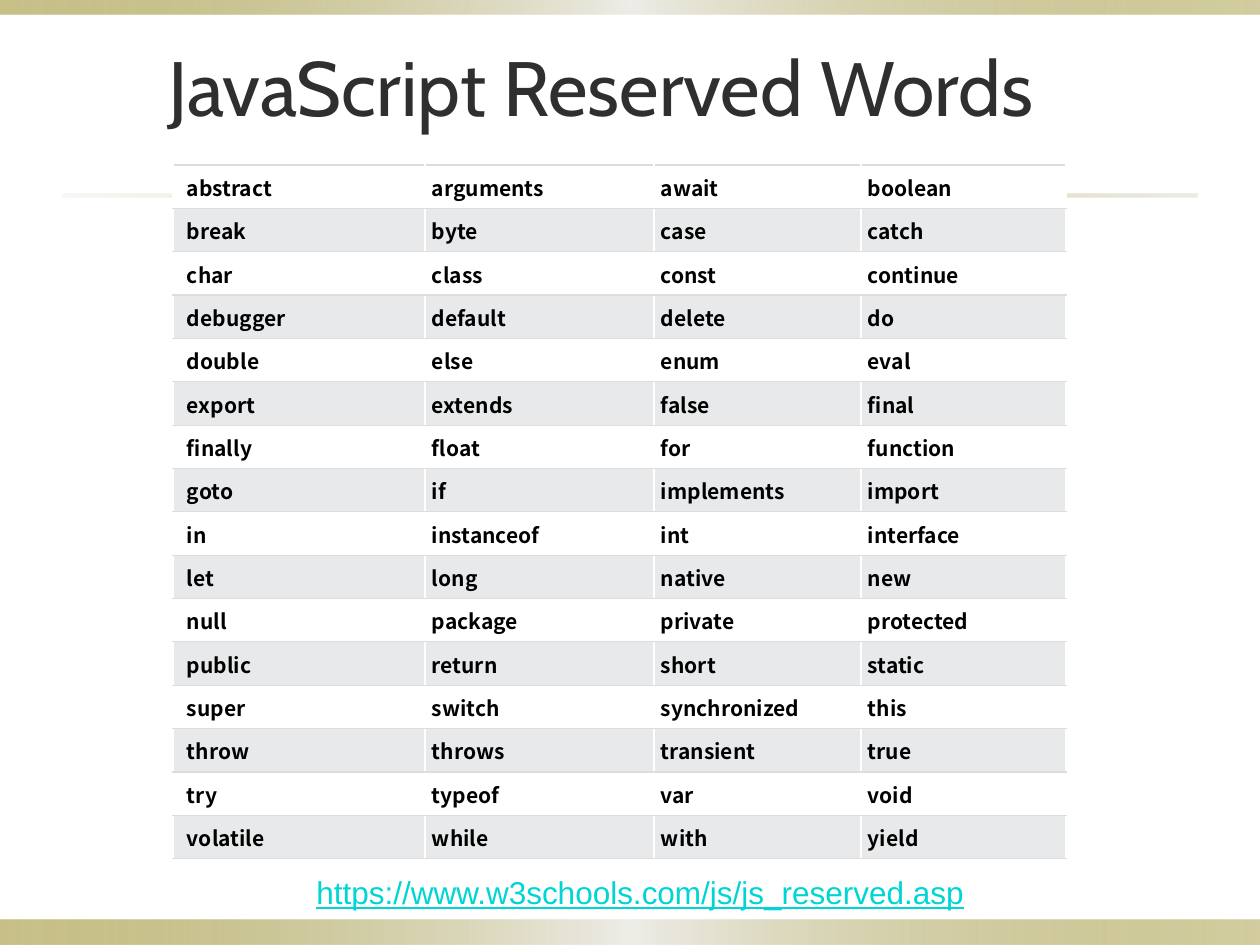
from lxml import etree
from pptx import Presentation
from pptx.dml.color import RGBColor as Rgb
from pptx.enum.shapes import MSO_SHAPE as Shape
from pptx.enum.text import MSO_ANCHOR as Anchor, PP_ALIGN as Align
from pptx.oxml.ns import qn
from pptx.util import Emu, Pt

SCALE = 914400 / 126
COLORS = {
    "gold": "918415", "pale": "EEEDE8", "sand": "DCD9CC",
    "ink": "2F2F2F", "text": "000000", "link": "00D5D5",
    "white": "FFFFFF", "stripe": "E7E9EB", "rule": "DDDDDD",
}
BAND_STOPS = [(0, "gold", 50), (50, "pale", 100), (100, "gold", 40)]
RULE_STOPS = [(0, "sand", 20), (50, "gold", 40), (100, "sand", 50)]
COLUMN_WIDTHS = [252, 229, 207, 205]
WORDS = """
abstract arguments await boolean
break byte case catch
char class const continue
debugger default delete do
double else enum eval
export extends false final
finally float for function
goto if implements import
in instanceof int interface
let long native new
null package private protected
public return short static
super switch synchronized this
throw throws transient true
try typeof var void
volatile while with yield
""".split()


def px(length):
    return Emu(round(length * SCALE))


def color(name):
    return Rgb.from_string(COLORS[name])


def add_color(parent, name):
    fill = etree.SubElement(parent, qn("a:solidFill"))
    etree.SubElement(fill, qn("a:srgbClr"), val=COLORS[name])


def add_span(para, text, font, size, shade, bold=False, underline=False):
    span = para.add_run()
    span.text = text
    span.font.name = font
    span.font.size = Pt(size)
    span.font.bold = bold
    span.font.underline = underline
    span.font.color.rgb = color(shade)


def add_gradient_bar(page, box, stops):
    bar = page.shapes.add_shape(Shape.RECTANGLE, *map(px, box))
    bar.shadow.inherit = False
    bar.line.fill.background()
    bar.fill.gradient()
    bar.fill.gradient_angle = 0
    stop_list = bar.fill._fill._gradFill.find(qn("a:gsLst"))
    for stop in list(stop_list):
        stop_list.remove(stop)
    for position, name, opacity in stops:
        stop = etree.SubElement(stop_list, qn("a:gs"), pos=str(position * 1000))
        shade = etree.SubElement(stop, qn("a:srgbClr"), val=COLORS[name])
        etree.SubElement(shade, qn("a:alpha"), val=str(opacity * 1000))


def add_title(page, box):
    title = page.shapes.title
    title.left, title.top, title.width, title.height = map(px, box)
    frame = title.text_frame
    frame.vertical_anchor = Anchor.MIDDLE
    para = frame.paragraphs[0]
    para.alignment = Align.CENTER
    add_span(para, "JavaScript\u00a0Reserved Words".replace("\u00a0", " "), "Cabin", 44, "ink")


def add_cell_rules(cell):
    properties = cell._tc.get_or_add_tcPr()
    for position, side in enumerate(("a:lnT", "a:lnB")):
        line = etree.Element(qn(side), w=str(Pt(0.75)))
        add_color(line, "rule")
        properties.insert(position, line)


def add_word_table(page, box):
    column_count = len(COLUMN_WIDTHS)
    row_count = len(WORDS) // column_count
    table = page.shapes.add_table(row_count, column_count, *map(px, box)).table
    table.first_row = False
    table.horz_banding = False
    for column, width in zip(table.columns, COLUMN_WIDTHS):
        column.width = px(width)
    for row in table.rows:
        row.height = px(box[3] / row_count)
    for index, word in enumerate(WORDS):
        row, column = divmod(index, column_count)
        cell = table.cell(row, column)
        cell.margin_left = px(14 if column == 0 else 7)
        cell.margin_right = cell.margin_top = cell.margin_bottom = px(7)
        cell.fill.solid()
        cell.fill.fore_color.rgb = color("stripe" if row % 2 else "white")
        add_cell_rules(cell)
        add_span(cell.text_frame.paragraphs[0], word,
                 "Noto Sans CJK SC", 12, "text", bold=True)


def add_source_link(page, box):
    frame = page.shapes.add_textbox(*map(px, box)).text_frame
    frame.word_wrap = True
    add_span(frame.paragraphs[0], "https://www.w3schools.com/js/js_reserved.asp",
             "Arial", 18, "link", underline=True)


def main():
    deck = Presentation()
    deck.slide_width, deck.slide_height = px(1260), px(945)
    page = deck.slides.add_slide(deck.slide_layouts[5])
    add_gradient_bar(page, (0, 920, 1260, 25), BAND_STOPS)
    add_gradient_bar(page, (0, 0, 1260, 15), BAND_STOPS)
    add_gradient_bar(page, (63, 194, 1134, 3), RULE_STOPS)
    add_source_link(page, (304, 867, 774, 50))
    add_word_table(page, (173, 165, 893, 694))
    add_title(page, (34, 37, 1134, 97))
    deck.save("out.pptx")


if __name__ == "__main__":
    main()
